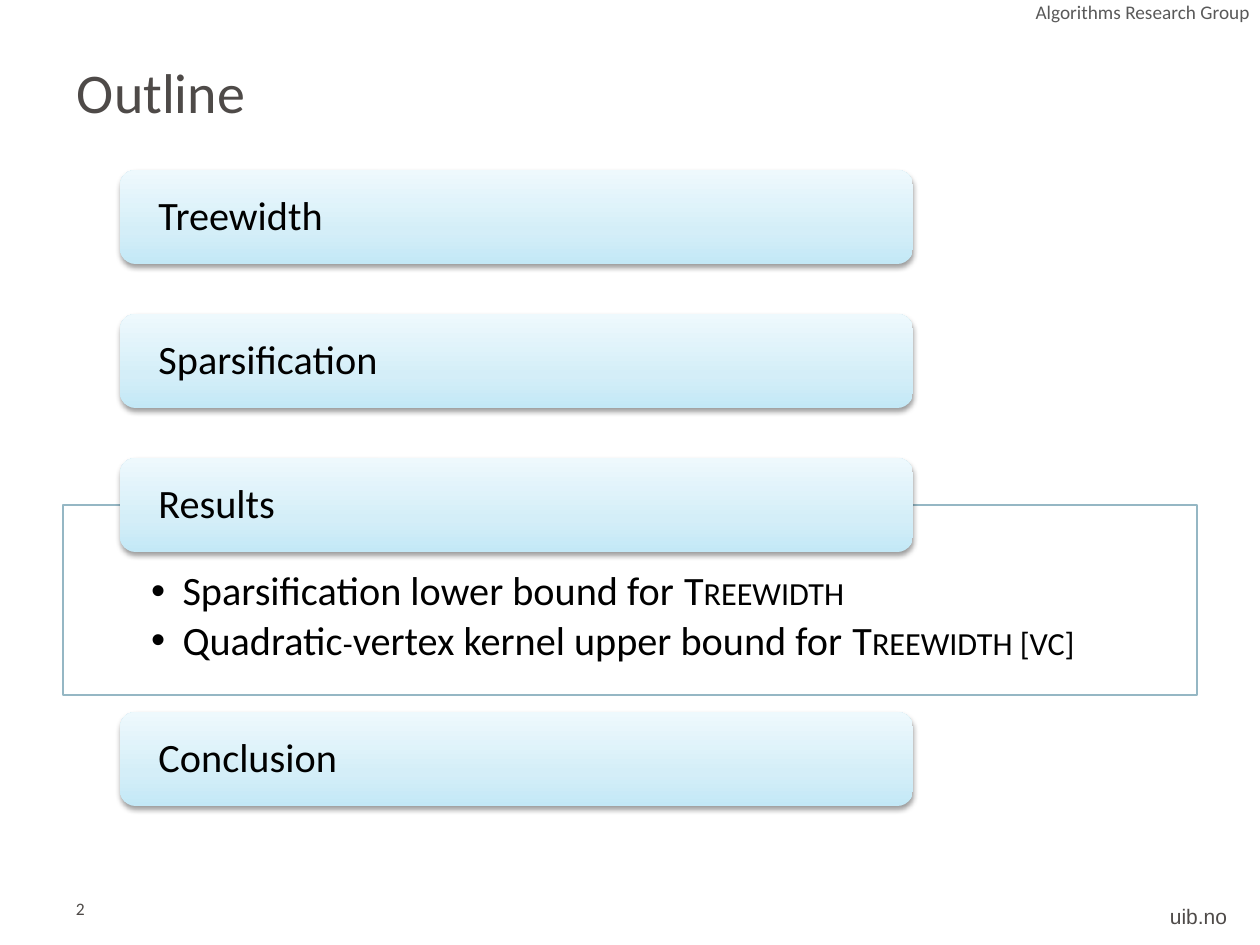
import copy

import lxml.etree
import pptx
import pptx.dml.color
import pptx.enum.dml
import pptx.enum.shapes
import pptx.enum.text
import pptx.oxml
import pptx.oxml.ns
import pptx.util

RGB = pptx.dml.color.RGBColor
ALIGN = pptx.enum.text.PP_ALIGN
ANCHOR = pptx.enum.text.MSO_ANCHOR
qn = pptx.oxml.ns.qn

PX = 914400 // 126
BLACK = RGB(0x00, 0x00, 0x00)
WHITE = RGB(0xFF, 0xFF, 0xFF)
INK = RGB(0x4E, 0x4A, 0x48)
GREY = RGB(0x59, 0x59, 0x59)
FRAME = RGB(0x95, 0xB7, 0xC4)
BAR_STOPS = [(0, RGB(0xC3, 0xE8, 0xF6)), (0.35, RGB(0xD4, 0xEE, 0xF8)), (1, RGB(0xEE, 0xF9, 0xFD))]

TITLE = "Outline"
SECTIONS = ["Treewidth", "Sparsification", "Results", "Conclusion"]
DETAILED = "Results"
# Each run is (text, small caps)
DETAILS = [
    [("Sparsification lower bound for ", False), ("Treewidth", True)],
    [("Quadratic", False), ("-", True), ("vertex kernel upper bound for ", False), ("Treewidth [vc]", True)],
]
# text, box, insets, alignment, size, font, colour, wrap
LABELS = [
    ("Algorithms Research Group", (591, 0, 672, 25), (13, 0, 13, 0), ALIGN.RIGHT, 11, "Calibri", GREY, True),
    ("2", (63, 898, 270, 38), (13, 0, 13, 6), ALIGN.LEFT, 10, "Calibri", INK, True),
    ("uib.no", (1157, 898, 83, 38), (13, 6, 13, 6), ALIGN.CENTER, 12, "Arial", INK, False),
]
BAR_LEFT, BAR_TOP, BAR_WIDTH, BAR_HEIGHT = 120, 170, 793, 94
BAR_PITCH = 144
DETAILS_HEIGHT = 190
DETAILS_GAP = 17

SHADOW = (
    '<a:effectLst xmlns:a="http://schemas.openxmlformats.org/drawingml/2006/main">'
    '<a:outerShdw blurRad="40000" dist="20000" dir="5400000" rotWithShape="0">'
    '<a:srgbClr val="000000"><a:alpha val="38000"/></a:srgbClr></a:outerShdw></a:effectLst>'
)


def place(shape, box):
    shape.left, shape.top, shape.width, shape.height = (n * PX for n in box)


def set_frame(frame, insets, anchor=ANCHOR.TOP, wrap=True):
    frame.margin_left, frame.margin_top, frame.margin_right, frame.margin_bottom = (n * PX for n in insets)
    frame.vertical_anchor = anchor
    frame.word_wrap = wrap
    frame.auto_size = pptx.enum.text.MSO_AUTO_SIZE.NONE


def style(run, size, color, font="Calibri"):
    run.font.size = pptx.util.Pt(size)
    run.font.name = font
    run.font.color.rgb = color


def fill_bar(bar):
    bar.fill.gradient()
    bar.fill.gradient_angle = 90
    stop_list = bar._element.spPr.find(qn("a:gradFill")).find(qn("a:gsLst"))
    stop_list.append(copy.deepcopy(stop_list[0]))
    for stop, (position, color) in zip(bar.fill.gradient_stops, BAR_STOPS):
        stop.position = position
        stop.color.rgb = color
    bar.line.fill.background()
    bar._element.spPr.append(pptx.oxml.parse_xml(SHADOW))


def add_bar(slide, section, top):
    bar = slide.shapes.add_shape(
        pptx.enum.shapes.MSO_SHAPE.ROUNDED_RECTANGLE,
        BAR_LEFT * PX, top * PX, BAR_WIDTH * PX, BAR_HEIGHT * PX)
    fill_bar(bar)
    set_frame(bar.text_frame, (34, 5, 34, 5), ANCHOR.MIDDLE)
    bar.text_frame.text = section
    paragraph = bar.text_frame.paragraphs[0]
    paragraph.alignment = ALIGN.LEFT
    paragraph.line_spacing = 0.9
    style(paragraph.runs[0], 23, BLACK)


def fill_details(details, top):
    place(details, (63, top, 1134, DETAILS_HEIGHT))
    details.fill.solid()
    details.fill.fore_color.rgb = WHITE
    white = details._element.spPr.find(qn("a:solidFill"))[0]
    lxml.etree.SubElement(white, qn("a:alpha"), val="90000")
    details.line.color.rgb = FRAME
    details.line.width = pptx.util.Pt(0.75)
    frame = details.text_frame
    set_frame(frame, (88, 66, 88, 23))
    for index, runs in enumerate(DETAILS):
        paragraph = frame.add_paragraph() if index else frame.paragraphs[0]
        paragraph.level = 1
        paragraph.line_spacing = 0.9
        paragraph.space_before = pptx.util.Pt(0)
        paragraph.space_after = pptx.util.Pt(3.4)
        properties = paragraph._p.get_or_add_pPr()
        properties.set("marL", "228600")
        properties.set("indent", "-228600")
        lxml.etree.SubElement(properties, qn("a:buFont"), typeface="Arial")
        lxml.etree.SubElement(properties, qn("a:buChar"), char="•")
        for text, small_caps in runs:
            run = paragraph.add_run()
            run.text = text
            style(run, 23, BLACK)
            if small_caps:
                run.font._element.set("cap", "small")


def add_label(slide, text, box, insets, alignment, size, font, color, wrap):
    label = slide.shapes.add_textbox(*(n * PX for n in box))
    set_frame(label.text_frame, insets, wrap=wrap)
    label.text_frame.text = text
    paragraph = label.text_frame.paragraphs[0]
    paragraph.alignment = alignment
    style(paragraph.runs[0], size, color, font)


def main():
    deck = pptx.Presentation()
    deck.slide_width, deck.slide_height = 1260 * PX, 945 * PX
    slide = deck.slides.add_slide(deck.slide_layouts[1])

    title = slide.shapes.title
    place(title, (64, 48, 1134, 87))
    set_frame(title.text_frame, (13, 6, 13, 6), ANCHOR.MIDDLE)
    title.text_frame.text = TITLE
    title.text_frame.paragraphs[0].alignment = ALIGN.LEFT
    style(title.text_frame.paragraphs[0].runs[0], 32, INK)

    top = BAR_TOP
    for section in SECTIONS:
        add_bar(slide, section, top)
        if section == DETAILED:
            details_top = top + BAR_HEIGHT // 2
            fill_details(slide.placeholders[1], details_top)
            top = details_top + DETAILS_HEIGHT + DETAILS_GAP
        else:
            top += BAR_PITCH

    for label in LABELS:
        add_label(slide, *label)
    deck.save("out.pptx")


if __name__ == "__main__":
    main()
